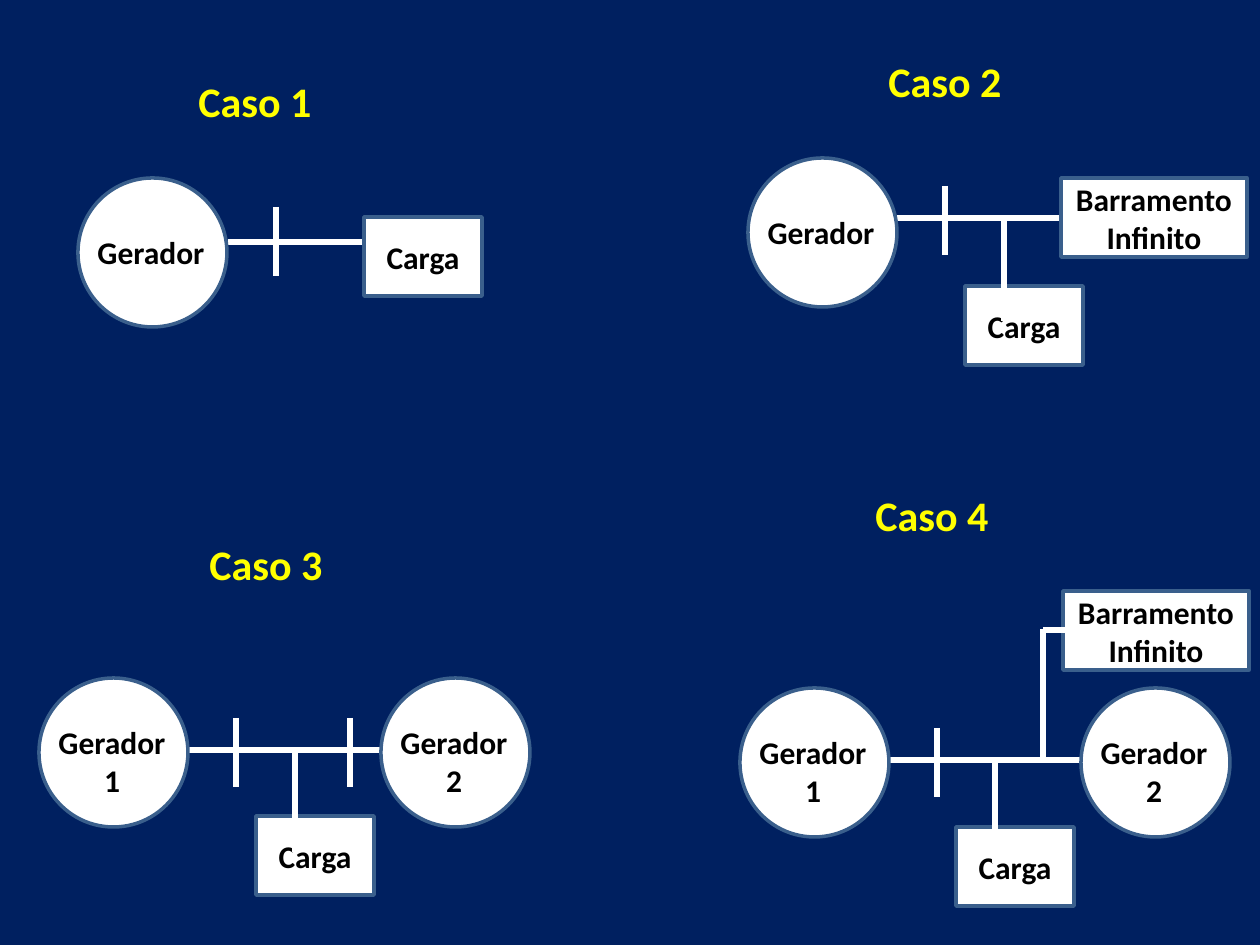
"""Build a slide with four one-line diagrams of generators, loads and an infinite bus."""
import pptx
import pptx.dml.color
import pptx.enum.shapes
import pptx.enum.text
import pptx.oxml.ns
import pptx.util
import lxml.etree

PX = 914400 / 126
COLORS = {"background": "002060", "caption": "FFFF00", "white": "FFFFFF",
          "outline": "3A5F8C", "label": "000000"}
ELLIPSE = pptx.enum.shapes.MSO_SHAPE.OVAL
RECTANGLE = pptx.enum.shapes.MSO_SHAPE.RECTANGLE
CENTER = pptx.enum.text.PP_ALIGN.CENTER


def rgb(name):
    return pptx.dml.color.RGBColor.from_string(COLORS[name])


def add_text(text, left, top, width, height, kind=None, size=18, color="label", align=CENTER):
    box = [round(value * PX) for value in (left, top, width, height)]
    if kind is None:
        shape = slide.shapes.add_textbox(*box)
        shape.text_frame.word_wrap = False
        shape.text_frame.auto_size = pptx.enum.text.MSO_AUTO_SIZE.SHAPE_TO_FIT_TEXT
    else:
        shape = slide.shapes.add_shape(kind, *box)
        shape.shadow.inherit = False
        shape.fill.solid()
        shape.fill.fore_color.rgb = rgb("white")
        shape.line.color.rgb = rgb("outline")
        shape.line.width = pptx.util.Pt(2)
        shape.text_frame.vertical_anchor = pptx.enum.text.MSO_ANCHOR.MIDDLE
    if text:
        shape.text_frame.text = text
    for paragraph in shape.text_frame.paragraphs:
        paragraph.alignment = align
        for run in paragraph.runs:
            run.font.name = "Calibri"
            run.font.size = pptx.util.Pt(size)
            run.font.bold = True
            run.font.color.rgb = rgb(color)


presentation = pptx.Presentation()
presentation.slide_width = pptx.util.Inches(10)
presentation.slide_height = pptx.util.Inches(7.5)
slide = presentation.slides.add_slide(presentation.slide_layouts[6])
slide.background.fill.solid()
slide.background.fill.fore_color.rgb = rgb("background")

captions = [("Caso 1", 186, 69), ("Caso 2", 876, 49), ("Caso 3", 197, 532), ("Caso 4", 863, 483)]
generators = [("Gerador", 78, 178), ("Gerador", 748, 158),
              ("Gerador\n1", 39, 678), ("Gerador\n2", 381, 678),
              ("Gerador\n1", 740, 688), ("Gerador\n2", 1081, 688)]
loads = [(364, 217), (965, 286), (256, 816), (956, 827)]
infinite_buses = [(1061, 178), (1063, 591)]

feeders = [(228, 242, 374, 242), (897, 218, 1105, 218), (188, 750, 397, 750), (888, 760, 1097, 760)]
busbars = [(x, y, x, y + 69) for x, y in
           [(276, 207), (945, 186), (236, 718), (350, 718), (937, 728)]]
load_drops = [(x, y, x, y + 104) for x, y in [(1004, 217), (295, 748), (995, 759)]]
bus_link = [(1043, 629, 1043, 757), (1043, 630, 1068, 630)]

for text, left, top in captions:
    add_text(text, left, top, 140, 63, size=24, color="caption", align=pptx.enum.text.PP_ALIGN.LEFT)

for layer in ("feeders", "equipment", "branches"):
    if layer == "equipment":
        for text, left, top in generators:
            add_text("", left, top, 149, 149, kind=ELLIPSE)
            if "\n" in text:
                add_text(text, left + 6, top + 39, 134, 89)
            else:
                add_text(text, left + 6, top + 49, 134, 50)
        for left, top in loads:
            add_text("Carga", left, top, 118, 79, kind=RECTANGLE)
        for left, top in infinite_buses:
            add_text("Barramento\nInfinito", left, top, 186, 79, kind=RECTANGLE)
        continue
    for ends in feeders if layer == "feeders" else busbars + load_drops + bus_link:
        connector = slide.shapes.add_connector(
            pptx.enum.shapes.MSO_CONNECTOR.STRAIGHT, *[round(value * PX) for value in ends])
        connector.line.color.rgb = rgb("white")
        connector.line.width = pptx.util.Pt(3)
        lxml.etree.SubElement(connector._element.spPr, pptx.oxml.ns.qn("a:effectLst"))

presentation.save("out.pptx")
